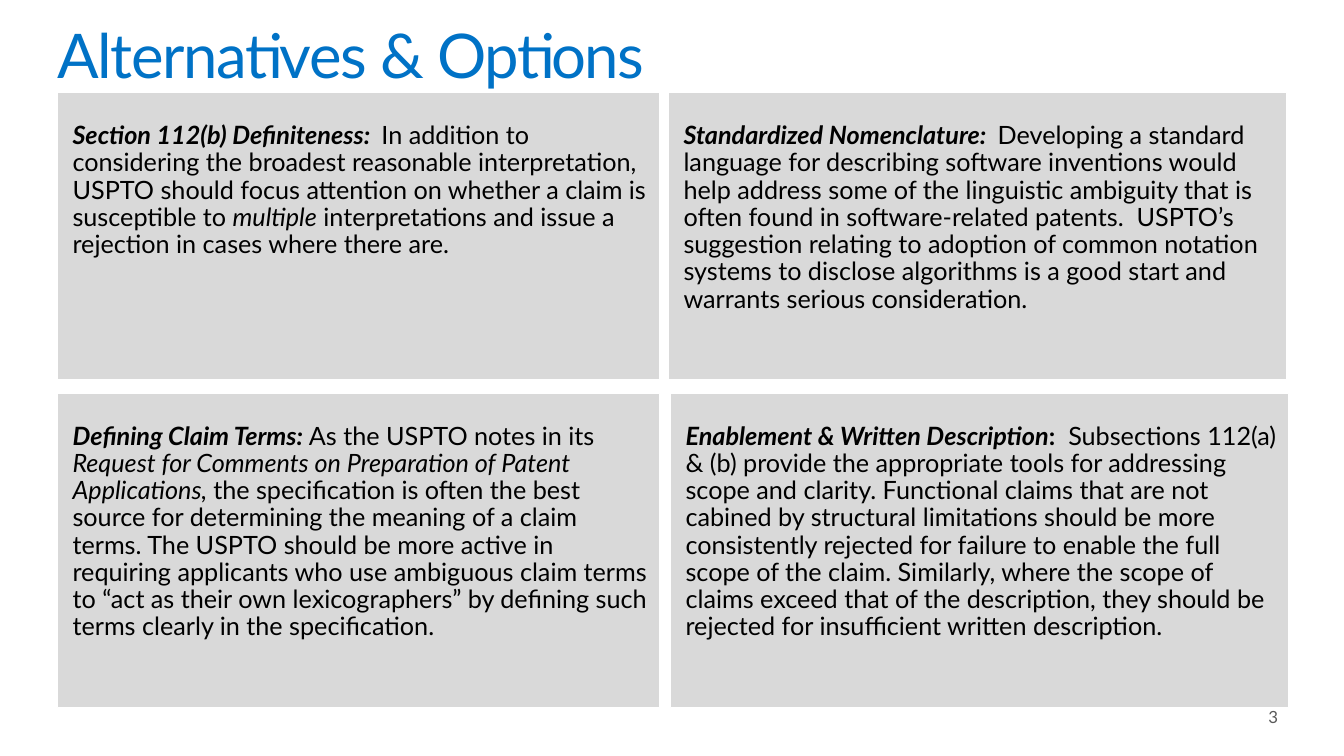
from dataclasses import dataclass
from typing import Any

from pptx import Presentation
from pptx import util as u
from pptx.dml.color import RGBColor
from pptx.enum import shapes, text

PX = 9144  # EMU in one px, 100 px to the inch
FONT = "Lato"
COLOURS = {"title": "0072C6", "panel": "D9D9D9", "edge": "FFFFFF",
           "body": "000000", "number": "595959"}

PLAIN: dict[str, Any] = {"bold": False, "italic": False}
ITALIC: dict[str, Any] = {"bold": False, "italic": True}
BOLD: dict[str, Any] = {"bold": True, "italic": False}
LEAD: dict[str, Any] = {"bold": True, "italic": True}


@dataclass(frozen=True)
class Span:
    wording: str
    style: dict[str, Any]


@dataclass(frozen=True)
class Panel:
    left: int
    top: int
    width: int
    height: int
    spans: tuple[Span, ...]


PANELS = (
    Panel(57, 92, 597, 285, (
        Span("Section 112(b) Definiteness:  ", LEAD),
        Span("In addition to considering the broadest reasonable interpretation, USPTO should "
             "focus attention on whether a claim is susceptible to ", PLAIN),
        Span("multiple", ITALIC),
        Span(" interpretations and issue a rejection in cases where there are.", PLAIN))),
    Panel(663, 92, 613, 285, (
        Span("Standardized Nomenclature:  ", LEAD),
        Span("Developing a standard language for describing software inventions would help "
             "address some of the linguistic ambiguity that is often found in software-related "
             "patents.  USPTO’s suggestion relating to adoption of common notation systems to "
             "disclose algorithms is a good start and warrants serious consideration.", PLAIN))),
    Panel(57, 390, 597, 312, (
        Span("Defining Claim Terms:", LEAD),
        Span(" As the USPTO notes in its ", PLAIN),
        Span("Request for Comments on Preparation of Patent Applications, ", ITALIC),
        Span("the specification is often the best source for determining the meaning of a claim "
             "terms. The USPTO should be more active in requiring applicants who use ambiguous "
             "claim terms to “act as their own lexicographers” by defining such terms clearly in "
             "the specification.", PLAIN))),
    Panel(665, 390, 613, 312, (
        Span("Enablement & Written Description", LEAD),
        Span(":", BOLD),
        Span("  Subsections 112(a) & (b) provide the appropriate tools for addressing scope and "
             "clarity. Functional claims that are not cabined by structural limitations should "
             "be more consistently rejected for failure to enable the full scope of the claim. "
             "Similarly, where the scope of claims exceed that of the description, they should "
             "be rejected for insufficient written description.", PLAIN))),
)


def assign(target: Any, values: dict[str, Any]) -> None:
    for name, value in values.items():
        setattr(target, name, value)


def place(box: Any, left: int, top: int, width: int, height: int) -> None:
    assign(box, {"left": left * PX, "top": top * PX,
                 "width": width * PX, "height": height * PX})


def format_frame(frame: Any, left: int, top: int, right: int, bottom: int) -> None:
    """Set the insets in px; text wraps and starts at the top left."""
    assign(frame, {"margin_left": left * PX, "margin_top": top * PX,
                   "margin_right": right * PX, "margin_bottom": bottom * PX,
                   "word_wrap": True, "auto_size": text.MSO_AUTO_SIZE.NONE,
                   "vertical_anchor": text.MSO_ANCHOR.TOP})
    frame.paragraphs[0].alignment = text.PP_ALIGN.LEFT


def add_span(para: Any, span: Span, size: int, colour: str, spacing: int = 0) -> None:
    """Add a run; spacing is in hundredths of a point."""
    run = para.add_run()
    run.text = span.wording
    assign(run.font, {"name": FONT, "size": u.Pt(size), **span.style})
    run.font.color.rgb = RGBColor.from_string(COLOURS[colour])
    if spacing:
        run.font._element.set("spc", str(spacing))


def draw_title(page: Any) -> None:
    title = page.shapes.title
    place(title, 57, 25, 1219, 67)
    format_frame(title.text_frame, 0, 0, 0, 0)
    para = title.text_frame.paragraphs[0]
    para.line_spacing = 0.9
    add_span(para, Span("Alternatives & Options", PLAIN), 44, "title", -100)


def draw_number(page: Any) -> None:
    box = page.shapes.add_textbox(0, 0, 0, 0)
    place(box, 1258, 701, 49, 20)
    format_frame(box.text_frame, 0, 0, 0, 0)
    add_span(box.text_frame.paragraphs[0], Span("3", PLAIN), 12, "number", -100)


def draw_panel(page: Any, panel: Panel) -> None:
    box = page.shapes.add_shape(shapes.MSO_SHAPE.RECTANGLE, 0, 0, 0, 0)
    place(box, panel.left, panel.top, panel.width, panel.height)
    box.shadow.inherit = False
    box.fill.solid()
    box.fill.fore_color.rgb = RGBColor.from_string(COLOURS["panel"])
    box.line.color.rgb = RGBColor.from_string(COLOURS["edge"])
    box.line.width = u.Pt(0.85)
    format_frame(box.text_frame, 15, 30, 10, 10)
    para = box.text_frame.paragraphs[0]
    assign(para, {"line_spacing": 0.9, "space_after": u.Pt(6)})
    for span in panel.spans:
        add_span(para, span, 18, "body")


def main() -> None:
    deck = Presentation()
    assign(deck, {"slide_width": 1333 * PX, "slide_height": 750 * PX})
    page = deck.slides.add_slide(deck.slide_layouts.get_by_name("Title Only"))
    draw_title(page)
    draw_number(page)
    for panel in PANELS:
        draw_panel(page, panel)
    deck.save("out.pptx")


if __name__ == "__main__":
    main()
